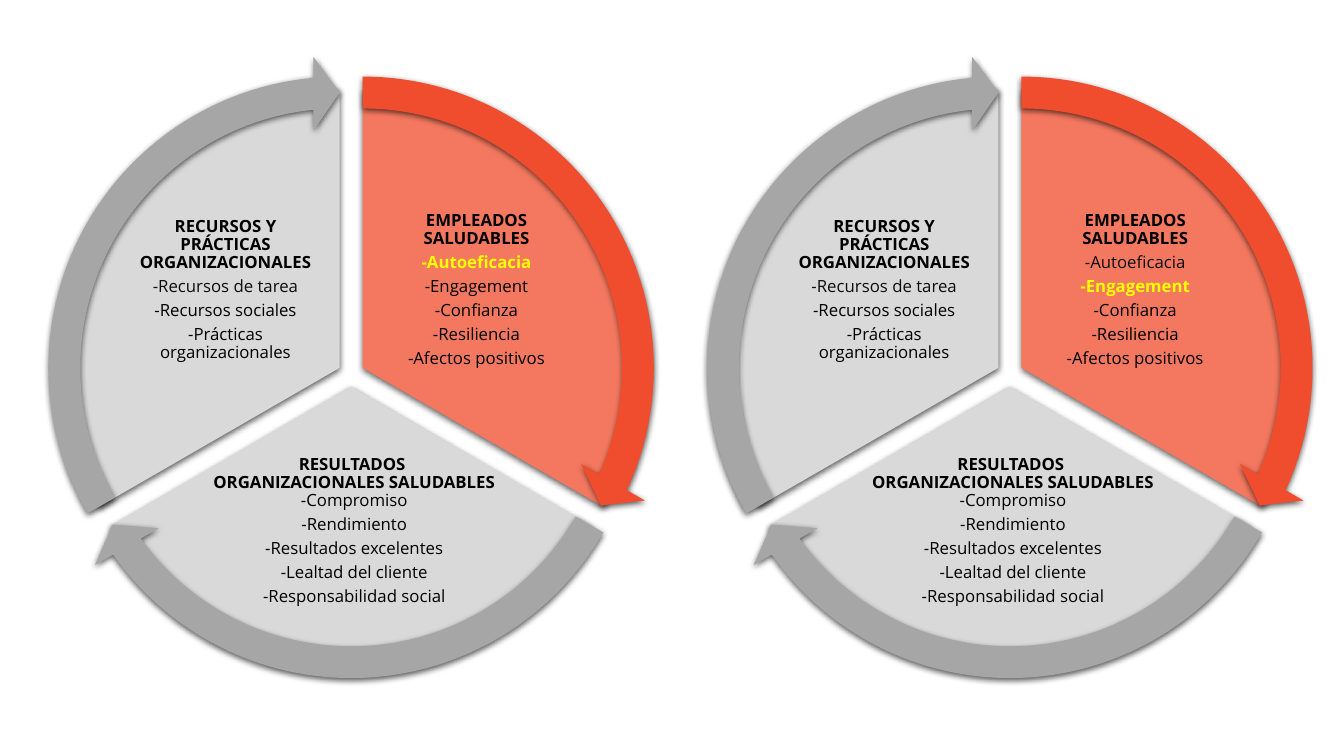
from math import cos, radians, sin, tan

from lxml import etree
from pptx import Presentation
from pptx import util as u
from pptx.dml.color import RGBColor
from pptx.enum import shapes, text
from pptx.oxml import ns

RED = RGBColor(0xEF, 0x4D, 0x2D)
SALMON = RGBColor(0xF3, 0x78, 0x5F)
GRAY = RGBColor(0xA6, 0xA6, 0xA6)
LIGHT_GRAY = RGBColor(0xD9, 0xD9, 0xD9)
BLACK = RGBColor(0, 0, 0)
NEAR_BLACK = RGBColor(0x0D, 0x0D, 0x0D)
YELLOW = RGBColor(0xFF, 0xFF, 0)

SECTORS = [
    {"center": (9.14, 9.27), "start": -90, "fill": SALMON, "arrow": RED,
     "arrow_angles": (14.725, 161.994), "margins": (7.42, 3, 1.68, 6.91),
     "heading": ["EMPLEADOS SALUDABLES"], "heading_gap": 4.2,
     "items": ["-Autoeficacia", "-Engagement", "-Confianza", "-Resiliencia",
               "-Afectos positivos"]},
    {"center": (8.85, 9.75), "start": 30, "fill": LIGHT_GRAY, "arrow": GRAY,
     "arrow_angles": (86.72, 18.005), "margins": (3.37, 8.6, 3.21, 1.34),
     "heading": ["RESULTADOS ", "ORGANIZACIONALES SALUDABLES"], "heading_gap": 0,
     "items": ["-Compromiso", "-Rendimiento", "-Resultados excelentes",
               "-Lealtad del cliente", "-Responsabilidad social"]},
    {"center": (8.56, 9.27), "start": 150, "fill": LIGHT_GRAY, "arrow": GRAY,
     "arrow_angles": (158.73, 90), "margins": (1.67, 3, 7.42, 6.91),
     "heading": ["RECURSOS Y PRÁCTICAS ORGANIZACIONALES"], "heading_gap": 4.2,
     "items": ["-Recursos de tarea", "-Recursos sociales",
               "-Prácticas organizacionales"]},
]
NEAR_BLACK_ITEMS = ("-Autoeficacia", "-Recursos de tarea")
WHEELS = [(0, "-Autoeficacia"), (16.6, "-Engagement")]
RADIUS = 7
ARROW_SIZE = 15.73
CURVE_SWEEP = 60
HANDLE = 4 / 3 * tan(radians(CURVE_SWEEP / 4))


def paint(shape, color):
    shape.fill.solid()
    shape.fill.fore_color.rgb = color
    shape.line.fill.background()
    shape.shadow.inherit = False
    effects = shape.element.spPr.find(ns.qn("a:effectLst"))
    shadow = etree.SubElement(effects, ns.qn("a:outerShdw"), blurRad="57150",
                              dist="19050", dir="5400000", algn="ctr", rotWithShape="0")
    color_node = etree.SubElement(shadow, ns.qn("a:srgbClr"), val="000000")
    etree.SubElement(color_node, ns.qn("a:alpha"), val="63000")


def write_text(shape, sector, highlight):
    frame = shape.text_frame
    frame.word_wrap = True
    frame.vertical_anchor = text.MSO_ANCHOR.MIDDLE
    (frame.margin_left, frame.margin_top,
     frame.margin_right, frame.margin_bottom) = map(u.Cm, sector["margins"])
    lines = [(words, True, sector["heading_gap"], BLACK) for words in sector["heading"]]
    for words in sector["items"]:
        color = NEAR_BLACK if words in NEAR_BLACK_ITEMS else BLACK
        marked = words == highlight
        lines.append((words, marked, 4.2, YELLOW if marked else color))
    for index, (words, bold, gap, color) in enumerate(lines):
        paragraph = frame.add_paragraph() if index else frame.paragraphs[0]
        paragraph.alignment = text.PP_ALIGN.CENTER
        paragraph.line_spacing = 0.9
        paragraph.space_after = u.Pt(gap)
        run = paragraph.add_run()
        run.text = words
        run.font.name = "Open Sans"
        run.font.size = u.Pt(12)
        run.font.bold = bold
        run.font.color.rgb = color


def on_circle(degrees, handle=0):
    angle = radians(degrees)
    return (u.Cm(RADIUS * (1 + cos(angle) - handle * sin(angle))),
            u.Cm(RADIUS * (1 + sin(angle) + handle * cos(angle))))


def add_sector(slide, sector, center, highlight):
    angles = [sector["start"] + CURVE_SWEEP * step for step in range(3)]
    points = [on_circle(angles[0])]
    for first, last in zip(angles, angles[1:]):
        points += [on_circle(first, HANDLE), on_circle(last, -HANDLE), on_circle(last)]
    points.append((u.Cm(RADIUS), u.Cm(RADIUS)))
    builder = slide.shapes.build_freeform(*points[0])
    builder.add_line_segments(points[1:], close=True)
    shape = builder.convert_to_shape()

    side = u.Cm(2 * RADIUS)
    shape.left, shape.top = (u.Cm(value - RADIUS) for value in center)
    shape.width = shape.height = side
    outline = next(shape.element.iter(ns.qn("a:path")))
    outline.set("w", str(side))
    outline.set("h", str(side))
    for node, (x, y) in zip(outline.iter(ns.qn("a:pt")), points):
        node.set("x", str(x))
        node.set("y", str(y))
    segments = outline.findall(ns.qn("a:lnTo"))
    for start in (0, 3):
        curve = etree.Element(ns.qn("a:cubicBezTo"))
        segments[start].addprevious(curve)
        for segment in segments[start:start + 3]:
            curve.append(segment[0])
            outline.remove(segment)

    paint(shape, sector["fill"])
    write_text(shape, sector, highlight)


def add_arrow(slide, sector, center):
    x, y = center
    shape = slide.shapes.add_shape(
        shapes.MSO_SHAPE.CIRCULAR_ARROW, u.Cm(x - ARROW_SIZE / 2),
        u.Cm(y - ARROW_SIZE / 2), u.Cm(ARROW_SIZE), u.Cm(ARROW_SIZE))
    for index, value in enumerate((0.051, 3.275, *sector["arrow_angles"], 0.059)):
        shape.adjustments[index] = value
    paint(shape, sector["arrow"])


def main():
    presentation = Presentation()
    presentation.slide_width = u.Cm(33.87)
    presentation.slide_height = u.Cm(19.05)
    slide = presentation.slides.add_slide(presentation.slide_layouts[6])
    for shift, highlight in WHEELS:
        placed = [(sector, (sector["center"][0] + shift, sector["center"][1]))
                  for sector in SECTORS]
        for sector, center in placed:
            add_sector(slide, sector, center, highlight)
        for sector, center in placed:
            add_arrow(slide, sector, center)
    presentation.save("out.pptx")


if __name__ == "__main__":
    main()
